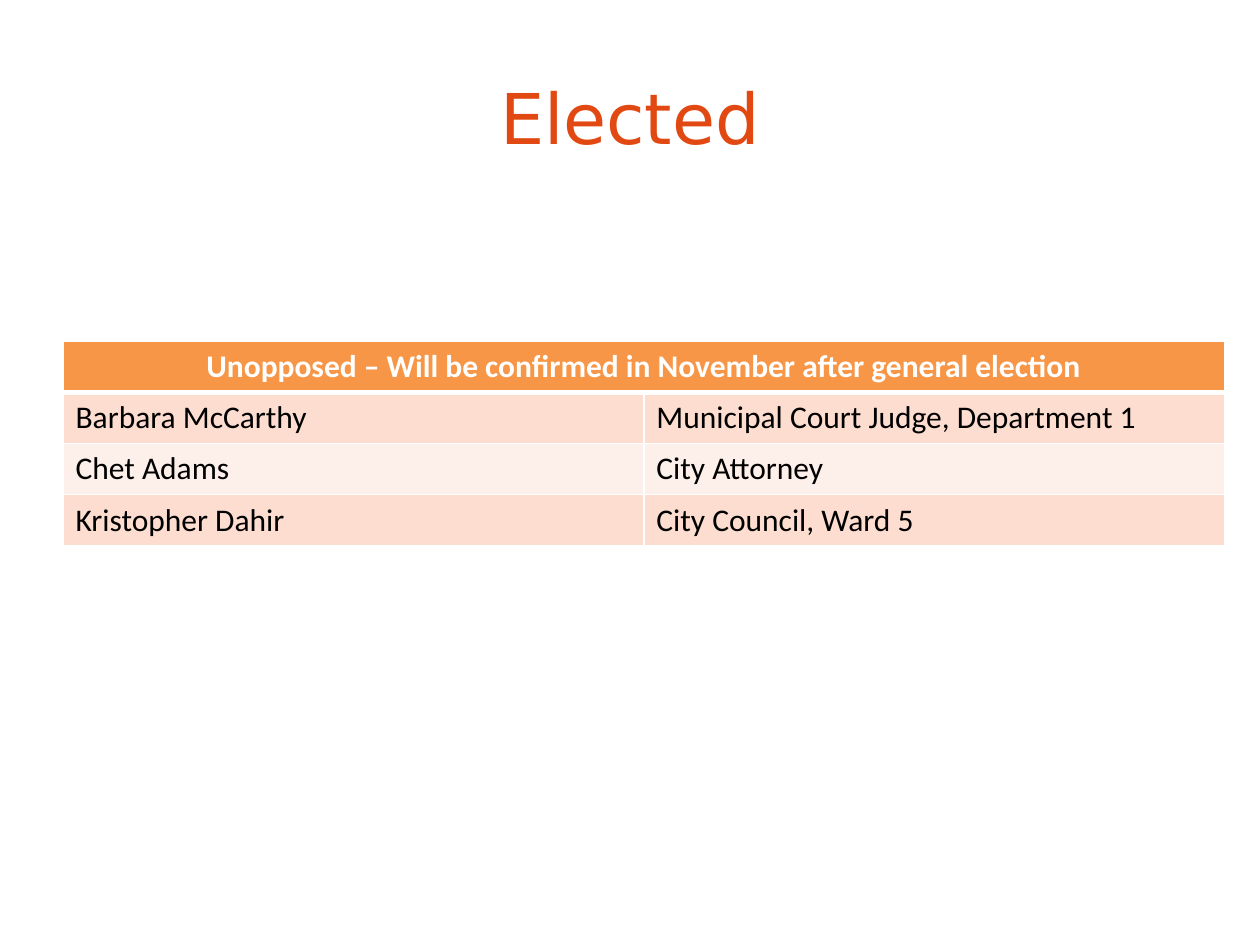
from lxml import etree
from pptx import Presentation
from pptx import util as u
from pptx.dml.color import RGBColor
from pptx.enum import text
from pptx.oxml import ns

WHITE = RGBColor(0xFF, 0xFF, 0xFF)
BLACK = RGBColor(0x00, 0x00, 0x00)
TITLE_RED = RGBColor(0xE2, 0x49, 0x12)
HEADER_ORANGE = RGBColor(0xF7, 0x96, 0x46)
BANDS = (RGBColor(0xFC, 0xDD, 0xCF), RGBColor(0xFD, 0xEF, 0xE9))

HEADING = "Unopposed – Will be confirmed in November after general election"
OFFICIALS = [
    ("Barbara McCarthy", "Municipal Court Judge, Department 1"),
    ("Chet Adams", "City Attorney"),
    ("Kristopher Dahir", "City Council, Ward 5"),
]


def write_text(frame, content, size=18, font="Calibri", color=BLACK,
               bold=False, align=text.PP_ALIGN.LEFT):
    paragraph = frame.paragraphs[0]
    paragraph.alignment = align
    run = paragraph.add_run()
    run.text = content
    run.font.size = u.Pt(size)
    run.font.name = font
    run.font.bold = bold
    run.font.color.rgb = color


def set_borders(cell, **widths):
    properties = cell._tc.get_or_add_tcPr()
    for side in "LRTB":
        line = etree.SubElement(properties, ns.qn(f"a:ln{side}"),
                                w=str(u.Pt(widths.get(side, 1))))
        fill = etree.SubElement(line, ns.qn("a:solidFill"))
        etree.SubElement(fill, ns.qn("a:srgbClr"), val=str(WHITE))


def style_cell(cell, color, **border_widths):
    set_borders(cell, **border_widths)
    cell.fill.solid()
    cell.fill.fore_color.rgb = color


def place_title(slide, left, top, width, height):
    title = slide.shapes.title
    title.left, title.top, title.width, title.height = left, top, width, height
    title.text_frame.vertical_anchor = text.MSO_ANCHOR.MIDDLE
    write_text(title.text_frame, "Elected", size=40, font="DejaVu Sans",
               color=TITLE_RED, align=text.PP_ALIGN.CENTER)


def place_officials_table(slide, left, top, width, height):
    table = slide.shapes.add_table(len(OFFICIALS) + 1, 2, left, top,
                                   width, height).table
    heading = table.cell(0, 0)
    heading.merge(table.cell(0, 1))
    write_text(heading.text_frame, HEADING, color=WHITE, bold=True,
               align=text.PP_ALIGN.CENTER)
    for column in range(2):
        style_cell(table.cell(0, column), HEADER_ORANGE, B=3)
    for row, official in enumerate(OFFICIALS, start=1):
        for column, content in enumerate(official):
            cell = table.cell(row, column)
            write_text(cell.text_frame, content)
            style_cell(cell, BANDS[(row - 1) % 2], T=3 if row == 1 else 1)


def main():
    presentation = Presentation()
    presentation.slide_width = u.Inches(10)
    presentation.slide_height = u.Inches(7.5)
    slide = presentation.slides.add_slide(presentation.slide_layouts[5])
    place_title(slide, u.Inches(0.5), u.Inches(0.3), u.Inches(9), u.Inches(1.25))
    place_officials_table(slide, u.Inches(0.5), u.Inches(2.71),
                          u.Inches(9.22), u.Inches(1.62))
    presentation.save("out.pptx")


if __name__ == "__main__":
    main()
